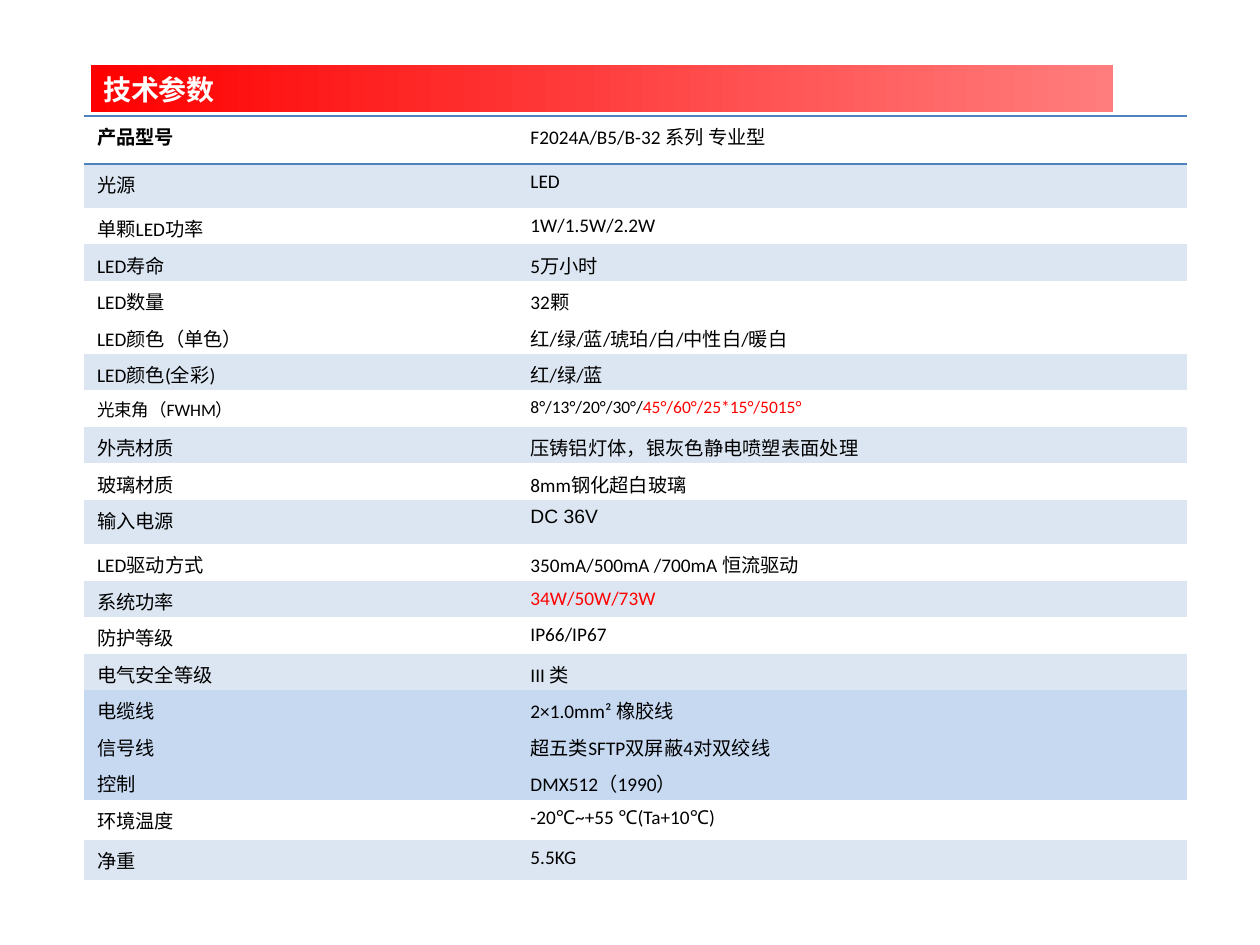
from dataclasses import dataclass
from typing import Optional

from lxml.etree import SubElement
from pptx import Presentation
from pptx.dml.color import RGBColor
from pptx.enum.shapes import MSO_SHAPE
from pptx.enum.text import MSO_ANCHOR, PP_ALIGN
from pptx.oxml import parse_xml
from pptx.oxml.ns import nsdecls, qn
from pptx.util import Inches, Pt


@dataclass(frozen=True)
class Theme:
    black: str = "000000"
    white: str = "FFFFFF"
    red: str = "FF0000"
    light_red: str = "FF7D7D"
    rule: str = "4F81BD"
    band: str = "DCE6F2"
    cable_band: str = "C6D9F1"
    latin: str = "Calibri"
    chinese: str = "Noto Sans CJK SC"
    title_size: float = 16
    body_size: float = 11
    small_size: float = 10


THEME = Theme()
NO_GRID_STYLE = "{2D5ABB26-0587-4C30-8999-92F81FD0307C}"


@dataclass(frozen=True)
class Parameter:
    label: str
    value: str
    fill: Optional[str] = None
    height: float = 0.29
    size: float = THEME.body_size
    highlight: str = ""
    value_font: str = THEME.latin
    heading: bool = False


PARAMETERS = [
    Parameter("产品型号", "F2024A/B5/B-32 系列 专业型", height=0.38, heading=True),
    Parameter("光源", "LED", THEME.band, 0.35),
    Parameter("单颗LED功率", "1W/1.5W/2.2W"),
    Parameter("LED寿命", "5万小时", THEME.band),
    Parameter("LED数量", "32颗"),
    Parameter("LED颜色（单色）", "红/绿/蓝/琥珀/白/中性白/暖白"),
    Parameter("LED颜色(全彩)", "红/绿/蓝", THEME.band),
    Parameter("光束角（FWHM）", "8°/13°/20°/30°/", size=THEME.small_size,
              highlight="45°/60°/25*15°/5015°"),
    Parameter("外壳材质", "压铸铝灯体，银灰色静电喷塑表面处理", THEME.band),
    Parameter("玻璃材质", "8mm钢化超白玻璃"),
    Parameter("输入电源", "DC 36V", THEME.band, 0.35, value_font="Arial"),
    Parameter("LED驱动方式", "350mA/500mA /700mA 恒流驱动"),
    Parameter("系统功率", "", THEME.band, highlight="34W/50W/73W"),
    Parameter("防护等级", "IP66/IP67"),
    Parameter("电气安全等级", "III 类", THEME.band),
    Parameter("电缆线", "2×1.0mm² 橡胶线", THEME.cable_band),
    Parameter("信号线", "超五类SFTP双屏蔽4对双绞线", THEME.cable_band),
    Parameter("控制", "DMX512（1990）", THEME.cable_band),
    Parameter("环境温度", "-20℃~+55 ℃(Ta+10℃)", height=0.32),
    Parameter("净重", "5.5KG", THEME.band, 0.32),
]


def add_run(paragraph, text: str, size: float, color: str = THEME.black,
            font_name: str = THEME.latin, bold: bool = False) -> None:
    run = paragraph.add_run()
    run.text = text
    run.font.size = Pt(size)
    run.font.bold = bold
    run.font.color.rgb = RGBColor.from_string(color)
    run.font.name = font_name
    SubElement(run.font._element, qn("a:ea")).set("typeface", THEME.chinese)


def add_title(slide, text: str) -> None:
    banner = slide.shapes.add_shape(
        MSO_SHAPE.RECTANGLE, Inches(0.72), Inches(0.52), Inches(8.11), Inches(0.37))
    banner.shadow.inherit = False
    banner.line.fill.background()
    banner.fill.gradient()
    banner.fill.gradient_angle = 0
    for stop, color, position in zip(
            banner.fill.gradient_stops, (THEME.red, THEME.light_red), (0, 1)):
        stop.color.rgb = RGBColor.from_string(color)
        stop.position = position
    banner.text_frame.vertical_anchor = MSO_ANCHOR.MIDDLE
    paragraph = banner.text_frame.paragraphs[0]
    paragraph.alignment = PP_ALIGN.LEFT
    add_run(paragraph, text, THEME.title_size, THEME.white, THEME.chinese, True)


def add_rules(cell) -> None:
    properties = cell._tc.get_or_add_tcPr()
    for index, edge in enumerate(("lnT", "lnB")):
        properties.insert(index, parse_xml(
            f'<a:{edge} {nsdecls("a")} w="{Pt(1)}"><a:solidFill>'
            f'<a:srgbClr val="{THEME.rule}"/></a:solidFill></a:{edge}>'))


def style_cell(cell, parameter: Parameter) -> None:
    cell.margin_bottom = 0
    if parameter.fill:
        cell.fill.solid()
        cell.fill.fore_color.rgb = RGBColor.from_string(parameter.fill)
    else:
        cell.fill.background()
    if parameter.heading:
        add_rules(cell)


def add_parameter_table(slide, parameters: list[Parameter]) -> None:
    height = sum(parameter.height for parameter in parameters)
    table = slide.shapes.add_table(
        len(parameters), 2, Inches(0.67), Inches(0.92), Inches(8.75), Inches(height)).table
    table.first_row = False
    table.horz_banding = False
    table._tbl.tblPr.find(qn("a:tableStyleId")).text = NO_GRID_STYLE
    for column, width in zip(table.columns, (3.44, 5.31)):
        column.width = Inches(width)
    for row, parameter in zip(table.rows, parameters):
        row.height = Inches(parameter.height)
        label_cell, value_cell = row.cells
        for cell in (label_cell, value_cell):
            style_cell(cell, parameter)
        add_run(label_cell.text_frame.paragraphs[0], parameter.label,
                parameter.size, bold=parameter.heading)
        paragraph = value_cell.text_frame.paragraphs[0]
        for text, color in ((parameter.value, THEME.black), (parameter.highlight, THEME.red)):
            if text:
                add_run(paragraph, text, parameter.size, color, parameter.value_font)


def main() -> None:
    presentation = Presentation()
    presentation.slide_width = Inches(10)
    presentation.slide_height = Inches(7.5)
    slide = presentation.slides.add_slide(presentation.slide_layouts[6])
    add_title(slide, "技术参数")
    add_parameter_table(slide, PARAMETERS)
    presentation.save("out.pptx")


if __name__ == "__main__":
    main()
